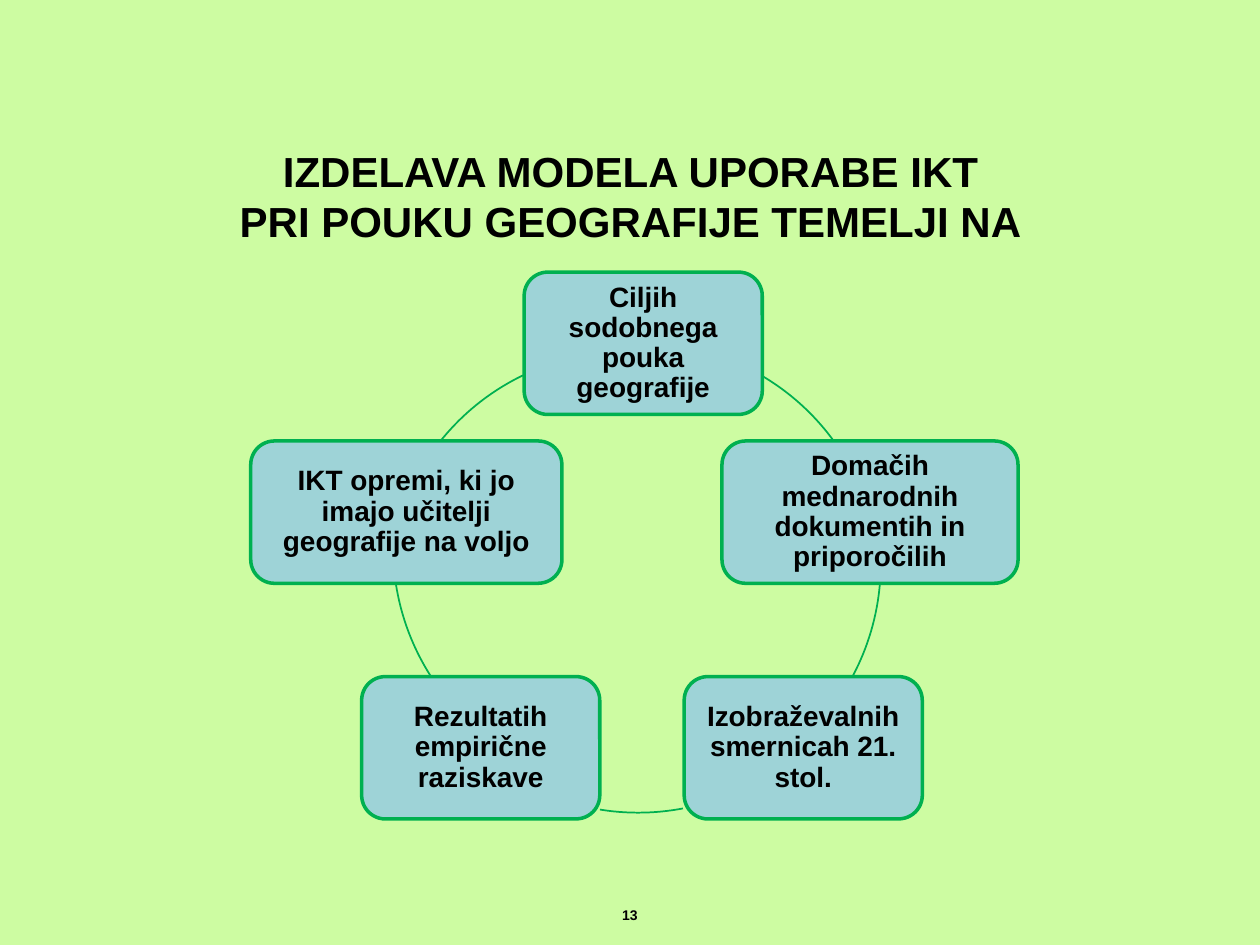
from pptx import Presentation
from pptx.dml.color import RGBColor
from pptx.enum.shapes import MSO_SHAPE
from pptx.enum.text import MSO_ANCHOR, PP_ALIGN
from pptx.util import Inches, Pt

CARD = MSO_SHAPE.ROUNDED_RECTANGLE
ARC = MSO_SHAPE.ARC
MIDDLE = MSO_ANCHOR.MIDDLE
CENTER = PP_ALIGN.CENTER

LIME = RGBColor(0xCD, 0xFC, 0xA2)
AQUA = RGBColor(0x9E, 0xD3, 0xD7)
GREEN = RGBColor(0x00, 0xB0, 0x50)
BLACK = RGBColor(0, 0, 0)

COLS, ROWS = 100, 75
CELL = Inches(0.1)
HIGH = 11.3
RING = 37.9

GOALS = [
    ("Ciljih sodobnega pouka geografije", (21.7, 0, 18.9), (12, 5.6), (300.5, 323.6)),
    ("Domačih mednarodnih dokumentih in priporočilih", (37.4, 13.4, 23.5), (12.1, 4.2), (5, 27.9)),
    ("Izobraževalnih smernicah 21. stol.", (34.4, 32.1, 18.9), (11.8, 5), (79.2, 99.2)),
    ("Rezultatih empirične raziskave", (8.8, 32.1, 18.9), (11.3, 2.9), (147.5, 171.1)),
    ("IKT opremi, ki jo imajo učitelji geografije na voljo", (0, 13.4, 24.7), (10.9, 6.3), (219, 244.2)),
]


def grid(*cells):
    return [round(cell * CELL) for cell in cells]


def write(frame, lines, size, pad=0.1, gap=1.0):
    frame.word_wrap = True
    frame.vertical_anchor = MIDDLE
    frame.margin_left = frame.margin_right = Inches(pad)
    frame.margin_top = frame.margin_bottom = Inches(0.05)
    para = frame.paragraphs[0]
    para.alignment = CENTER
    para.line_spacing = gap
    for num, line in enumerate(lines):
        if num:
            para.add_line_break()
        run = para.add_run()
        run.text = line
        run.font.name = "Arial"
        run.font.size = Pt(size)
        run.font.bold = True
        run.font.color.rgb = BLACK


def add_title(slide, box):
    frame = slide.shapes.add_textbox(*grid(*box)).text_frame
    write(frame, ["IZDELAVA MODELA UPORABE IKT", "PRI POUKU GEOGRAFIJE TEMELJI NA"], 24)


def add_footer(slide, box):
    frame = slide.shapes.add_textbox(*grid(*box)).text_frame
    write(frame, ["13"], 8)


def add_shape(slide, kind, box, width):
    shape = slide.shapes.add_shape(kind, *grid(*box))
    shape.shadow.inherit = False
    shape.line.color.rgb = GREEN
    shape.line.width = Pt(width)
    return shape


def add_cycle(slide, left, top):
    for text, (x, y, wide), (dx, dy), turn in GOALS:
        card = add_shape(slide, CARD, (left + x, top + y, wide, HIGH), 2)
        card.fill.solid()
        card.fill.fore_color.rgb = AQUA
        write(card.text_frame, [text], 16, 0.12, 0.9)
        arc = add_shape(slide, ARC, (left + dx, top + dy, RING, RING), 1)
        arc.fill.background()
        for num, angle in enumerate(turn):
            arc.adjustments[num] = angle * 0.6


def main():
    deck = Presentation()
    deck.slide_width, deck.slide_height = grid(COLS, ROWS)
    slide = deck.slides.add_slide(deck.slide_layouts[6])
    slide.background.fill.solid()
    slide.background.fill.fore_color.rgb = LIME
    add_title(slide, (5.2, 11.2, 89.7, 8.7))
    add_cycle(slide, 19.9, 21.6)
    add_footer(slide, (5.1, 70.3, 89.8, 4.7))
    deck.save("out.pptx")


if __name__ == "__main__":
    main()
